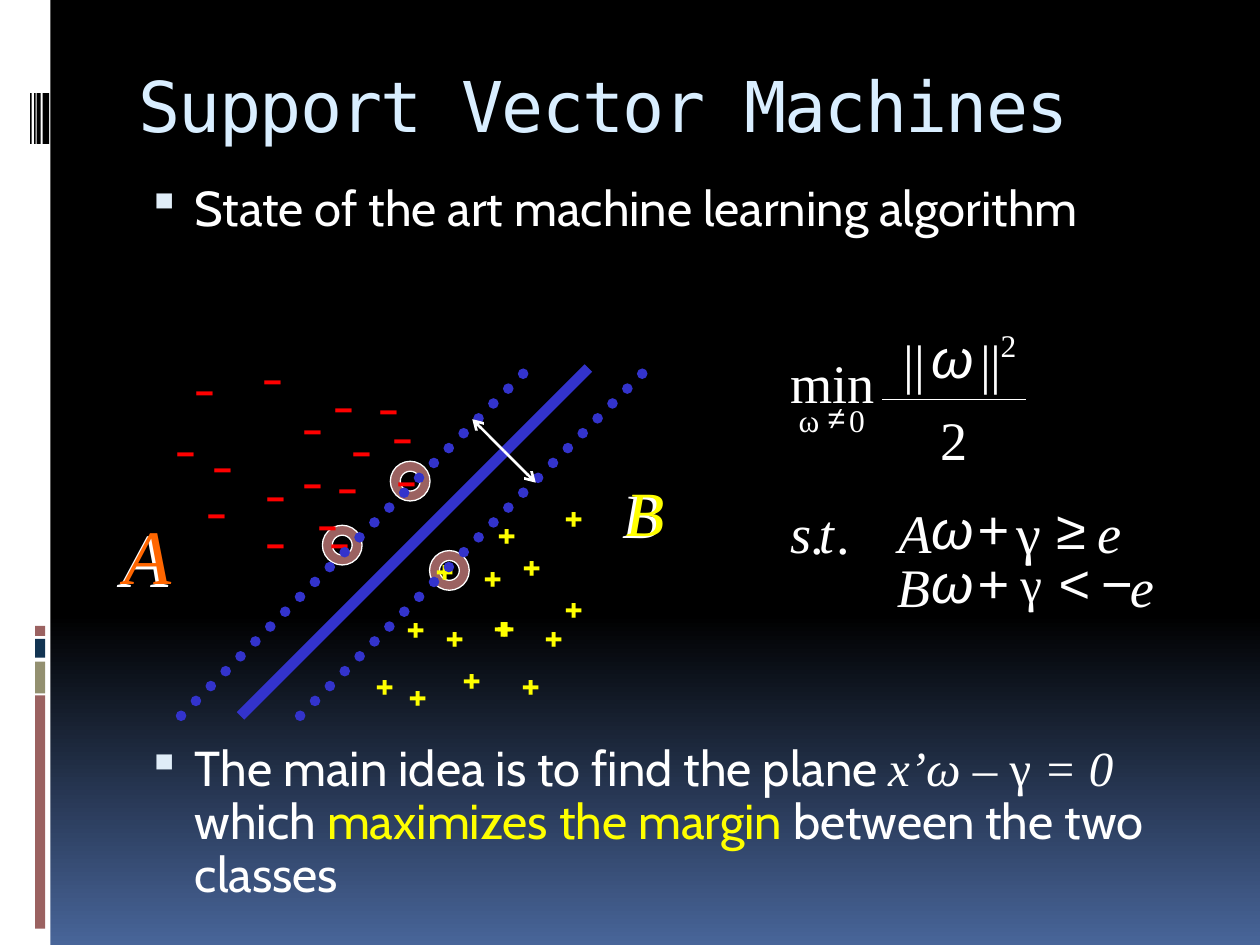
import dataclasses

import lxml.etree
import pptx
import pptx.dml.color
import pptx.enum.dml
import pptx.enum.shapes
import pptx.enum.text
import pptx.oxml.ns
import pptx.util

Cm, Pt = pptx.util.Cm, pptx.util.Pt
SHAPES = pptx.enum.shapes.MSO_SHAPE
qn = pptx.oxml.ns.qn


@dataclasses.dataclass(frozen=True)
class Theme:
    white: str = "FFFFFF"
    black: str = "000000"
    glow: str = "486599"
    title: str = "D9EEFF"
    bullet: str = "E0EDF8"
    rust: str = "9B6261"
    olive: str = "939070"
    navy: str = "123452"
    red: str = "FF0000"
    orange: str = "FF6600"
    yellow: str = "FFFF00"
    plane: str = "3333CC"
    title_font: str = "DejaVu Sans Mono"
    body_font: str = "Cabin"
    math_font: str = "Times New Roman"
    sign_font: str = "Arial"
    title_size: int = 40
    body_size: int = 28
    mark_size: int = 24
    class_a_size: int = 44
    class_b_size: int = 36
    math_size: int = 31
    script_size: int = 18


THEME = Theme()

MINUSES = [
    (3.64, 1.08), (4.28, 0.64), (5.19, 0.69), (5.55, 2.14), (3.95, 3.03), (1.08, 1.53),
    (1.84, 1.86), (1.48, 0.31), (2.85, 0.09), (5.47, 1.28), (4.63, 1.53), (4.35, 2.27),
    (3.64, 2.17), (2.91, 2.45), (1.71, 2.78), (2.91, 3.39), (4.2, 3.39),
]
PLUSES = [
    (5.12, 6.23), (5.78, 6.46), (5.75, 5.09), (6.33, 3.92), (6.54, 5.27), (6.87, 6.1),
    (7.58, 3.18), (7.3, 4.05), (7.55, 5.06), (8.09, 3.84), (7.5, 5.06), (8.06, 6.23),
    (8.93, 2.85), (8.93, 4.68), (8.52, 5.27),
]
SUPPORT_VECTORS = [(4.3, 3.69), (6.46, 4.2), (5.67, 2.4)]


def rgb(color):
    return pptx.dml.color.RGBColor.from_string(color)


def style(span, size, font, color, bold=False, italic=False):
    span.font.size = Pt(size)
    span.font.name = font
    span.font.color.rgb = rgb(color)
    span.font.bold = bold
    span.font.italic = italic


def add_filled(page, kind, left, top, width, height, color):
    shape = page.shapes.add_shape(kind, Cm(left), Cm(top), Cm(width), Cm(height))
    shape.shadow.inherit = False
    shape.fill.solid()
    shape.fill.fore_color.rgb = rgb(color)
    shape.line.fill.background()
    return shape


def add_label(page, text, left, top, width, height, size, font, color,
              bold=False, italic=False, inset=True):
    box = page.shapes.add_textbox(Cm(left), Cm(top), Cm(width), Cm(height))
    frame = box.text_frame
    frame.text = text
    frame.word_wrap = False
    frame.auto_size = pptx.enum.text.MSO_AUTO_SIZE.SHAPE_TO_FIT_TEXT
    if not inset:
        frame.margin_left = frame.margin_right = frame.margin_top = frame.margin_bottom = 0
    style(frame.paragraphs[0].runs[0], size, font, color, bold, italic)


def add_line(page, start, end, color, width, dotted=False, arrow=False):
    line = page.shapes.add_connector(
        pptx.enum.shapes.MSO_CONNECTOR.STRAIGHT, *(Cm(value) for value in (*start, *end)))
    line.line.color.rgb = rgb(color)
    line.line.width = Pt(width)
    properties = line.element.spPr
    outline = properties.find(qn("a:ln"))
    if dotted:
        line.line.dash_style = pptx.enum.dml.MSO_LINE.ROUND_DOT
        outline.set("cap", "rnd")
    if arrow:
        lxml.etree.SubElement(outline, qn("a:tailEnd"), type="arrow")
    lxml.etree.SubElement(properties, qn("a:effectLst"))


def draw_background(page):
    fill = page.background.fill
    fill.gradient()
    fill.gradient_angle = 270
    for stop, position, color in zip(fill.gradient_stops, (0.65, 1), (THEME.black, THEME.glow)):
        stop.position = position
        stop.color.rgb = rgb(color)


def draw_sidebar(page, left, top, width, height):
    add_filled(page, SHAPES.RECTANGLE, left, top, width, height, THEME.white)
    for y, size, color in [(14.02, 4.7, THEME.rust), (13.34, 0.64, THEME.olive),
                           (12.88, 0.38, THEME.navy), (12.62, 0.2, THEME.rust)]:
        add_filled(page, SHAPES.RECTANGLE, left + 0.71, top + y, 0.2, size, color)
    for x, size in [(0.86, 0.13), (0.74, 0.08), (0.69, 0.03), (0.61, 0.03)]:
        add_filled(page, SHAPES.RECTANGLE, left + x, top + 1.88, size, 1.02, THEME.black)


def draw_title(page, text, left, top, width, height):
    title = page.shapes.title
    title.left, title.top, title.width, title.height = map(Cm, (left, top, width, height))
    title.text_frame.text = text
    title.text_frame.vertical_anchor = pptx.enum.text.MSO_ANCHOR.MIDDLE
    para = title.text_frame.paragraphs[0]
    para.alignment = pptx.enum.text.PP_ALIGN.LEFT
    span = para.runs[0]
    style(span, THEME.title_size, THEME.title_font, THEME.title)
    span.font._element.set("spc", "-100")


def draw_bullet(page, spans, left, top, width, height, spacing=1.0):
    box = page.shapes.add_textbox(Cm(left), Cm(top), Cm(width), Cm(height))
    box.text_frame.word_wrap = True
    para = box.text_frame.paragraphs[0]
    para.space_before = Pt(7)
    para.line_spacing = spacing
    properties = para._p.get_or_add_pPr()
    properties.set("marL", str(Cm(1.14)))
    properties.set("indent", str(Cm(-0.97)))
    color = lxml.etree.SubElement(properties, qn("a:buClr"))
    lxml.etree.SubElement(color, qn("a:srgbClr"), val=THEME.bullet)
    lxml.etree.SubElement(properties, qn("a:buSzPct"), val="95000")
    lxml.etree.SubElement(properties, qn("a:buChar"), char="▪")
    for text, font, color, italic in spans:
        span = para.add_run()
        span.text = text
        style(span, THEME.body_size, font, color, italic=italic)


def draw_plot(page, left, top):
    for x, y in SUPPORT_VECTORS:
        ring = add_filled(page, SHAPES.DONUT, left + x, top + y, 0.8, 0.8, THEME.rust)
        ring.adjustments[0] = 0.25
        ring.line.color.rgb = rgb(THEME.white)
        ring.line.width = Pt(0.75)
    for text, places, color in [("–", MINUSES, THEME.red), ("+", PLUSES, THEME.yellow)]:
        for x, y in places:
            add_label(page, text, left + x, top + y, 1.13, 1.27,
                      THEME.mark_size, THEME.body_font, color, bold=True)
    for text, x, y, width, height, size, color in [
            ("A", 0.01, 3.26, 1.55, 2.11, THEME.class_a_size, THEME.white),
            ("A", 0.06, 3.21, 1.45, 2.11, THEME.class_a_size, THEME.orange),
            ("B", 10.09, 2.57, 1.35, 1.78, THEME.class_b_size, THEME.white),
            ("B", 10.17, 2.52, 1.3, 1.78, THEME.class_b_size, THEME.yellow)]:
        add_label(page, text, left + x, top + y, width, height, size,
                  THEME.math_font, color, italic=True)
    for shift in (0, 1.2, -1.2):
        add_line(page, (left + 2.65 + shift, top + 7.53), (left + 9.66 + shift, top + 0.52),
                 THEME.plane, 6, dotted=shift != 0)
    center_x, center_y = left + 7.96, top + 2.19
    for reach in (0.64, -0.64):
        add_line(page, (center_x, center_y), (center_x + reach, center_y + reach),
                 THEME.white, 1.5, arrow=True)


def draw_formula(page, left, top):
    full, script = THEME.math_size, THEME.script_size
    serif, sign = THEME.math_font, THEME.sign_font
    add_line(page, (left + 1.88, top + 1.55), (left + 4.78, top + 1.55), THEME.white, 0.25)
    for font, size, italic, symbols in [
            (serif, full, True, [("e", 6.88, 4.65, 0.48), ("B", 2.18, 4.65, 0.66),
                                 ("e", 6.22, 3.56, 0.48), ("A", 2.21, 3.56, 0.66),
                                 ("t", 0.61, 3.56, 0.3), ("s", 0.03, 3.56, 0.43)]),
            (serif, 28, False, [("γ", 4.67, 4.65, 0.43)]),
            (serif, 32, False, [("γ", 4.6, 3.56, 0.51)]),
            (sign, full, False, [("−", 6.3, 4.57, 0.61), ("<", 5.44, 4.57, 0.61),
                                 ("+", 3.81, 4.57, 0.61), ("≥", 5.39, 3.48, 0.61),
                                 ("+", 3.81, 3.48, 0.61)]),
            (sign, script, False, [("≠", 0.79, 1.53, 0.36)]),
            (sign, full, True, [("ω", 2.87, y, 0.76) for y in (4.57, 3.48, 0.03)]),
            (serif, full, False, [(".", 0.97, 3.58, 0.28), (".", 0.43, 3.58, 0.28),
                                  ("2", 3.07, 1.7, 0.56), ("||", 3.86, 0.13, 0.46),
                                  ("||", 2.31, 0.13, 0.46), ("min", 0.03, 0.54, 1.73)]),
            (serif, script, False, [("2", 4.27, 0.08, 0.33), ("0", 1.22, 1.58, 0.33),
                                    ("ω", 0.2, 1.58, 0.43)])]:
        for text, x, y, width in symbols:
            add_label(page, text, left + x, top + y, width, size * 0.0425, size, font,
                      THEME.white, italic=italic, inset=False)


def main():
    deck = pptx.Presentation()
    deck.slide_width, deck.slide_height = Cm(25.4), Cm(19.05)
    page = deck.slides.add_slide(deck.slide_layouts.get_by_name("Title Only"))
    body, math, white = THEME.body_font, THEME.math_font, THEME.white
    draw_background(page)
    draw_sidebar(page, 0, 0, 1.02, 19.05)
    draw_title(page, "Support Vector Machines", 2.54, 0.84, 21.59, 2.54)
    draw_bullet(page, [("State of the art machine learning algorithm", body, white, False)],
                2.54, 3.45, 21.59, 1.85)
    draw_plot(page, 2.2, 6.9)
    draw_formula(page, 15.9, 6.5)
    draw_bullet(page, [("The main idea is to find the plane ", body, white, False),
                       ("x’ω – ", math, white, True),
                       ("γ", math, white, False),
                       (" = 0", math, white, True),
                       (" which ", body, white, False),
                       ("maximizes the margin ", body, THEME.yellow, False),
                       ("between the two classes", body, white, False)],
                2.54, 14.88, 21.59, 3.76, spacing=0.9)
    deck.save("out.pptx")


if __name__ == "__main__":
    main()
